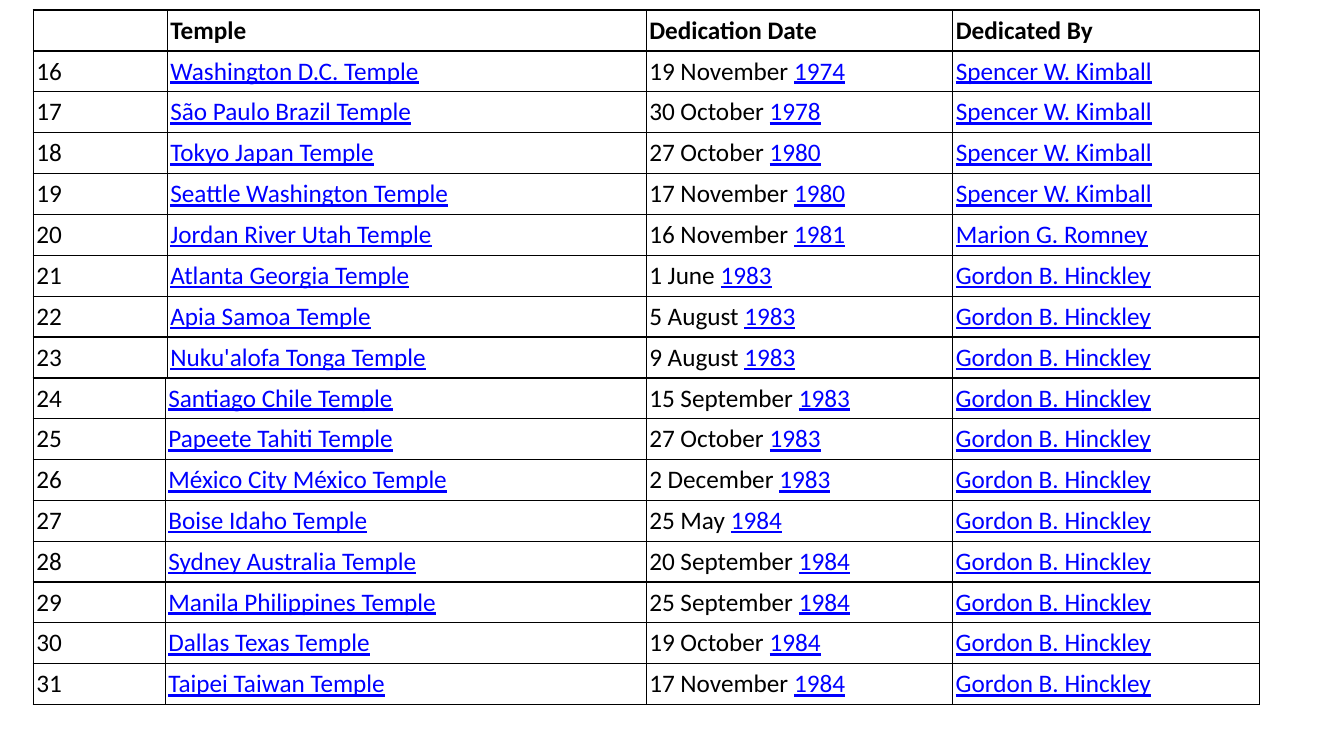
from lxml.etree import SubElement
from pptx import Presentation
from pptx.dml.color import RGBColor
from pptx.enum.text import MSO_ANCHOR
from pptx.oxml.ns import qn
from pptx.util import Inches, Pt

BLACK, BLUE = "000000", "0000FF"
NBSP = " "
LEFT, WIDTH = 0.33, 12.17
HEADS = ["", "Temple", "Dedication Date", "Dedicated By"]
KIMBALL = "Spencer W. Kimball"
ROMNEY = "Marion G. Romney"
HINCKLEY = "Gordon B. Hinckley"
FIRST = 16
SPLIT = 8
TEMPLES = [
    ("Washington D.C. Temple", "19 November", "1974", KIMBALL),
    ("São Paulo Brazil Temple", "30 October", "1978", KIMBALL),
    ("Tokyo Japan Temple", "27 October", "1980", KIMBALL),
    ("Seattle Washington Temple", "17 November", "1980", KIMBALL),
    ("Jordan River Utah Temple", "16 November", "1981", ROMNEY),
    ("Atlanta Georgia Temple", "1 June", "1983", HINCKLEY),
    ("Apia Samoa Temple", "5 August", "1983", HINCKLEY),
    ("Nuku'alofa Tonga Temple", "9 August", "1983", HINCKLEY),
    ("Santiago Chile Temple", "15 September", "1983", HINCKLEY),
    ("Papeete Tahiti Temple", "27 October", "1983", HINCKLEY),
    ("México City México Temple", "2 December", "1983", HINCKLEY),
    ("Boise Idaho Temple", "25 May", "1984", HINCKLEY),
    ("Sydney Australia Temple", "20 September", "1984", HINCKLEY),
    ("Manila Philippines Temple", "25 September", "1984", HINCKLEY),
    ("Dallas Texas Temple", "19 October", "1984", HINCKLEY),
    ("Taipei Taiwan Temple", "17 November", "1984", HINCKLEY),
]


def paint(color, value):
    color.rgb = RGBColor.from_string(value)


def style(font, color=BLACK, bold=False, line=False):
    font.name = "Calibri"
    font.size = Pt(18)
    font.bold = bold
    font.underline = line
    paint(font.color, color)


def add_run(cell, text, **look):
    run = cell.text_frame.paragraphs[0].add_run()
    run.text = text
    style(run.font, **look)


def add_link(cell, text):
    """Add text that looks like a link, blue and underlined."""
    add_run(cell, text, color=BLUE, line=True)


def add_edges(cell):
    props = cell._tc.get_or_add_tcPr()
    for side in ("lnL", "lnR", "lnT", "lnB"):
        edge = SubElement(props, qn(f"a:{side}"), w=str(Pt(1)))
        fill = SubElement(edge, qn("a:solidFill"))
        SubElement(fill, qn("a:srgbClr"), val=BLACK)


def format_cell(cell):
    cell.margin_left = cell.margin_right = Inches(0.03)
    cell.margin_top = cell.margin_bottom = Inches(0.03)
    cell.vertical_anchor = MSO_ANCHOR.MIDDLE
    add_edges(cell)
    cell.fill.background()
    style(cell.text_frame.paragraphs[0].font)


def add_grid(slide, top, height, cols, count):
    """Add an empty ruled table and return it."""
    frame = slide.shapes.add_table(count, len(cols), Inches(LEFT), Inches(top),
                                   Inches(WIDTH), Inches(height))
    table = frame.table
    table.first_row = table.horz_banding = False
    for col, width in zip(table.columns, cols):
        col.width = Inches(width)
    for row in table.rows:
        row.height = Inches(height / count)
    for cell in table.iter_cells():
        format_cell(cell)
    return table


def fill_head(table):
    for col, head in enumerate(HEADS):
        if head:
            add_run(table.cell(0, col), head, bold=True)


def fill_rows(table, temples, number, start=0):
    for row, (temple, day, year, leader) in enumerate(temples):
        cells = table.rows[start + row].cells
        add_run(cells[0], str(number + row))
        add_link(cells[1], temple)
        add_run(cells[2], day + NBSP)
        add_link(cells[2], year)
        add_link(cells[3], leader)


def main():
    deck = Presentation()
    deck.slide_width, deck.slide_height = Inches(13.33), Inches(7.5)
    slide = deck.slides.add_slide(deck.slide_layouts[6])

    early, late = TEMPLES[:SPLIT], TEMPLES[SPLIT:]
    lower = add_grid(slide, 3.75, 3.24, [1.31, 4.77, 3.04, 3.04], len(late))
    fill_rows(lower, late, FIRST + SPLIT)
    upper = add_grid(slide, 0.1, 3.65, [1.33, 4.75, 3.04, 3.04], len(early) + 1)
    fill_head(upper)
    fill_rows(upper, early, FIRST, start=1)

    deck.save("out.pptx")


if __name__ == "__main__":
    main()
